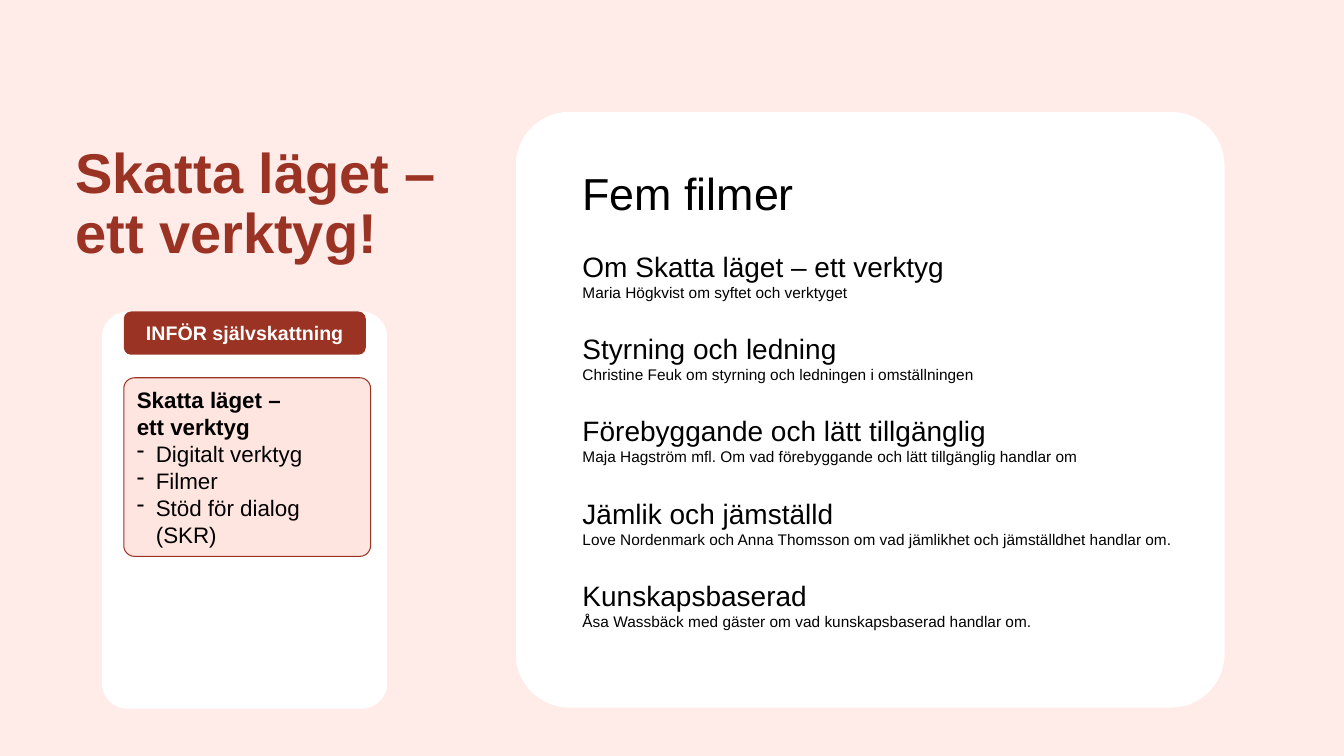
from dataclasses import dataclass

from lxml import etree
from pptx import Presentation
from pptx.dml.color import RGBColor
from pptx.enum.shapes import MSO_SHAPE
from pptx.enum.text import MSO_ANCHOR, PP_ALIGN
from pptx.oxml.ns import qn
from pptx.shapes.autoshape import Shape
from pptx.slide import Slide
from pptx.text.text import TextFrame
from pptx.util import Cm, Pt

ROUNDED = MSO_SHAPE.ROUNDED_RECTANGLE
MIDDLE, TOP = MSO_ANCHOR.MIDDLE, MSO_ANCHOR.TOP
LEFT, CENTER = PP_ALIGN.LEFT, PP_ALIGN.CENTER


@dataclass(frozen=True)
class Theme:
    font: str = "Arial"
    background: str = "FFEBE8"
    panel: str = "FFFFFF"
    accent: str = "9A3324"
    card: str = "FFE5DF"
    ink: str = "000000"
    title: float = 40
    heading: float = 32
    film: float = 20
    caption: float = 11
    label: float = 14
    body: float = 16
    film_gap: float = 21.6
    bullet_indent: float = 0.48


THEME = Theme()


@dataclass(frozen=True)
class Area:
    left: float
    top: float
    width: float
    height: float

    def lengths(self) -> tuple[Cm, Cm, Cm, Cm]:
        return Cm(self.left), Cm(self.top), Cm(self.width), Cm(self.height)


@dataclass(frozen=True)
class Line:
    text: str
    size: float
    color: str = THEME.ink
    bold: bool = False
    align: PP_ALIGN = LEFT
    gap: float = 0
    spacing: float = 1.0
    bullet: bool = False


@dataclass(frozen=True)
class Panel:
    area: Area
    rounding: float
    fill: str
    outline: str | None = None
    lines: tuple[Line, ...] = ()


@dataclass(frozen=True)
class Film:
    name: str
    caption: str


FILMS = (
    Film("Om Skatta läget – ett verktyg", "Maria Högkvist om syftet och verktyget"),
    Film("Styrning och ledning", "Christine Feuk om styrning och ledningen i omställningen"),
    Film("Förebyggande och lätt tillgänglig",
         "Maja Hagström mfl. Om vad förebyggande och lätt tillgänglig handlar om"),
    Film("Jämlik och jämställd",
         "Love Nordenmark och Anna Thomsson om vad jämlikhet och jämställdhet handlar om."),
    Film("Kunskapsbaserad", "Åsa Wassbäck med gäster om vad kunskapsbaserad handlar om."),
)

TOOL_PARTS = ("Digitalt verktyg", "Filmer", "Stöd för dialog\n(SKR)")

TITLE = Line("Skatta läget – ett verktyg!", THEME.title, THEME.accent, bold=True, spacing=0.9)

FILM_LINES = (
    Line("Fem filmer", THEME.heading),
    *(
        line
        for film in FILMS
        for line in (
            Line(film.name, THEME.film, gap=THEME.film_gap),
            Line(film.caption, THEME.caption),
        )
    ),
)

PANELS = (
    Panel(Area(2.57, 7.85, 7.19, 10.01), 0.09, THEME.panel),
    Panel(Area(13, 2.82, 17.86, 15.01), 0.09, THEME.panel),
    Panel(
        Area(3.12, 7.85, 6.1, 1.09), 0.17, THEME.accent,
        lines=(Line("INFÖR självskattning", THEME.label, THEME.panel, bold=True, align=CENTER),),
    ),
    Panel(
        Area(3.12, 9.52, 6.22, 4.5), 0.06, THEME.card, THEME.accent,
        (
            Line("Skatta läget –\nett verktyg", THEME.body, bold=True),
            *(Line(part, THEME.body, bullet=True) for part in TOOL_PARTS),
        ),
    ),
)


def write_lines(frame: TextFrame, lines: tuple[Line, ...], anchor: MSO_ANCHOR) -> None:
    frame.word_wrap = True
    frame.vertical_anchor = anchor
    for index, line in enumerate(lines):
        paragraph = frame.paragraphs[0] if index == 0 else frame.add_paragraph()
        paragraph.text = line.text
        paragraph.alignment = line.align
        paragraph.line_spacing = line.spacing
        paragraph.space_before = Pt(line.gap)
        if line.bullet:
            properties = paragraph._p.get_or_add_pPr()
            properties.set("marL", str(Cm(THEME.bullet_indent)))
            properties.set("indent", str(-Cm(THEME.bullet_indent)))
            etree.SubElement(properties, qn("a:buChar"), char="-")
        paragraph.font.name = THEME.font
        paragraph.font.size = Pt(line.size)
        paragraph.font.bold = line.bold
        paragraph.font.color.rgb = RGBColor.from_string(line.color)


def draw_panel(slide: Slide, panel: Panel) -> Shape:
    shape = slide.shapes.add_shape(ROUNDED, *panel.area.lengths())
    shape.shadow.inherit = False
    shape.adjustments[0] = panel.rounding
    shape.fill.solid()
    shape.fill.fore_color.rgb = RGBColor.from_string(panel.fill)
    if panel.outline:
        shape.line.color.rgb = RGBColor.from_string(panel.outline)
        shape.line.width = Pt(0.75)
    else:
        shape.line.fill.background()
    write_lines(shape.text_frame, panel.lines, MIDDLE)
    return shape


def draw_text(slide: Slide, area: Area, lines: tuple[Line, ...], anchor: MSO_ANCHOR) -> Shape:
    box = slide.shapes.add_textbox(*area.lengths())
    write_lines(box.text_frame, lines, anchor)
    return box


def main() -> None:
    deck = Presentation()
    deck.slide_width, deck.slide_height = Cm(33.87), Cm(19.05)
    slide = deck.slides.add_slide(deck.slide_layouts[6])
    slide.background.fill.solid()
    slide.background.fill.fore_color.rgb = RGBColor.from_string(THEME.background)
    for panel in PANELS:
        draw_panel(slide, panel)
    draw_text(slide, Area(14.43, 4.04, 15.57, 12.47), FILM_LINES, TOP)
    draw_text(slide, Area(1.65, 3.33, 10.87, 3.68), (TITLE,), MIDDLE)
    deck.save("out.pptx")


if __name__ == "__main__":
    main()
